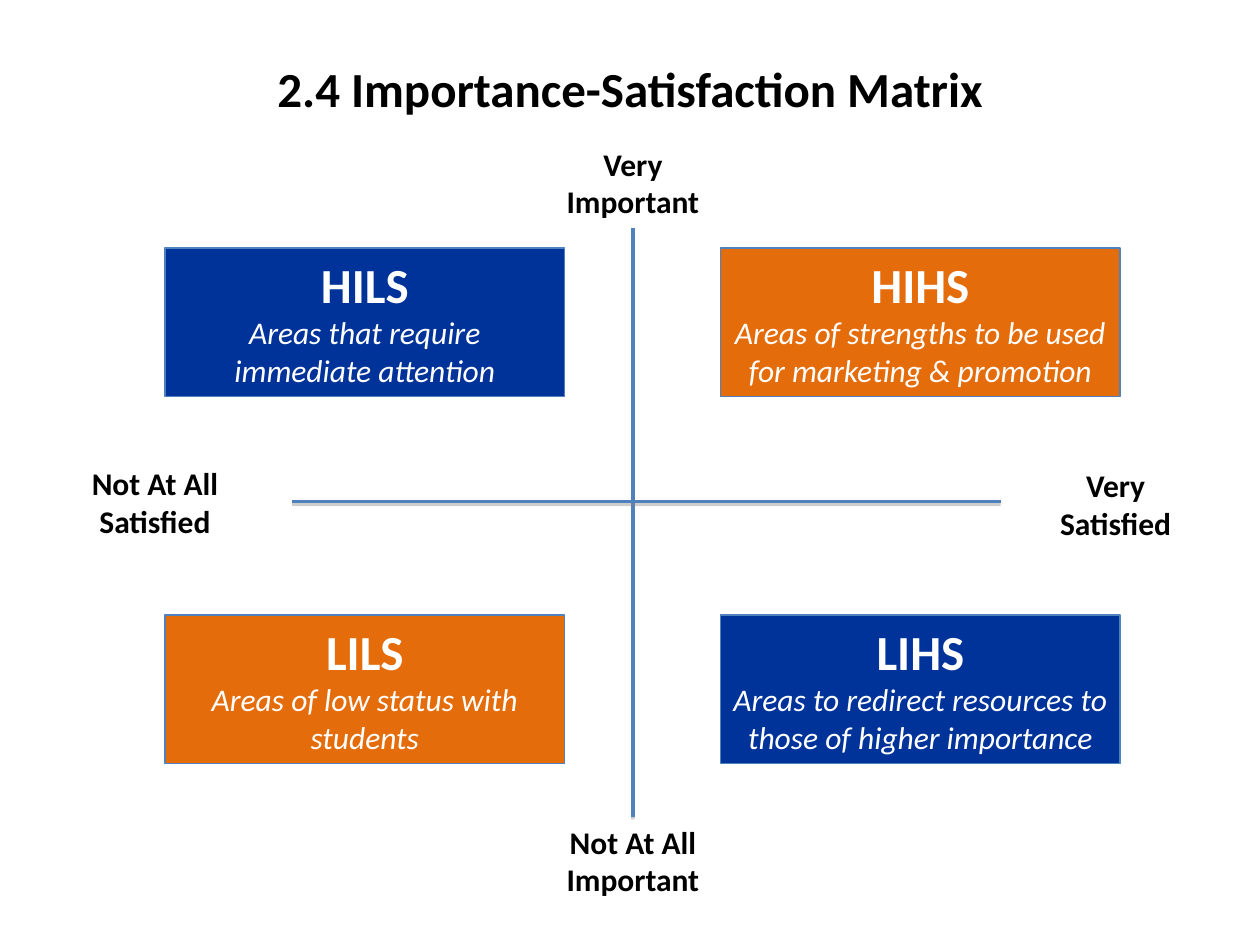
"""Build the importance-satisfaction matrix slide."""
from dataclasses import dataclass

from lxml.etree import SubElement as Sub
from pptx import Presentation as Deck
from pptx.dml.color import RGBColor as Rgb
from pptx.enum.shapes import MSO_CONNECTOR as Link, MSO_SHAPE as Kind
from pptx.enum.text import MSO_ANCHOR as Anchor, PP_ALIGN as Align
from pptx.oxml.ns import qn
from pptx.util import Cm, Pt


@dataclass(frozen=True)
class Theme:
    font: str = "Calibri"
    ink: str = "000000"
    pale: str = "FFFFFF"
    blue: str = "003399"
    warm: str = "E46C0A"
    edge: str = "4F81BD"
    shade: str = "808080"
    large: int = 28
    small: int = 18
    thick: float = 2
    thin: float = 0.75


LOOK = Theme()
MID = 12.76


def add_run(para, text, size, color, bold=False, slant=False):
    para.alignment = Align.CENTER
    run = para.add_run()
    run.text = text
    font = run.font
    font.name, font.size = LOOK.font, Pt(size)
    font.bold, font.italic = bold, slant
    font.color.rgb = Rgb.from_string(color)


def add_label(slide, text, left, top, width, height=1.8, size=LOOK.small, anchor=Anchor.TOP):
    box = slide.shapes.add_textbox(Cm(left), Cm(top), Cm(width), Cm(height))
    frame = box.text_frame
    frame.word_wrap = True
    frame.vertical_anchor = anchor
    add_run(frame.paragraphs[0], text, size, LOOK.ink, bold=True)
    return box


def add_axis(slide, start=(0, 0), end=(0, 0)):
    points = [Cm(n) for n in (*start, *end)]
    axis = slide.shapes.add_connector(Link.STRAIGHT, *points)
    axis.line.color.rgb = Rgb.from_string(LOOK.edge)
    axis.line.width = Pt(LOOK.thick)
    props = axis.element.find(qn("p:spPr"))
    drop = Sub(Sub(props, qn("a:effectLst")), qn("a:outerShdw"),
               dist=str(Pt(1.6)), dir="5400000", rotWithShape="0")
    tint = Sub(drop, qn("a:srgbClr"), val=LOOK.shade)
    Sub(tint, qn("a:alpha"), val="38000")
    return axis


def add_card(slide, code, note, left, top, fill):
    card = slide.shapes.add_shape(Kind.RECTANGLE, Cm(left), Cm(top), Cm(8.05), Cm(3))
    card.shadow.inherit = False
    card.fill.solid()
    card.fill.fore_color.rgb = Rgb.from_string(fill)
    card.line.color.rgb = Rgb.from_string(LOOK.edge)
    card.line.width = Pt(LOOK.thin)
    frame = card.text_frame
    frame.word_wrap = True
    frame.vertical_anchor = Anchor.TOP
    add_run(frame.paragraphs[0], code, LOOK.large, LOOK.pale, bold=True)
    add_run(frame.add_paragraph(), note, LOOK.small, LOOK.pale, slant=True)


def main():
    deck = Deck()
    deck.slide_width, deck.slide_height = Cm(25.4), Cm(19.05)
    slide = deck.slides.add_slide(deck.slide_layouts[6])

    add_label(slide, "2.4 Importance-Satisfaction Matrix", 1.27, 0.76, 22.86,
              2.03, LOOK.large, Anchor.MIDDLE)
    high = add_label(slide, "Very Important", MID - 1.82, 2.79, 3.64)
    low = add_label(slide, "Not At All Important", MID - 2.34, 16.46, 4.68)
    add_label(slide, "Not At All Satisfied", 0.89, 9.22, 4.47, anchor=Anchor.MIDDLE)
    add_label(slide, "Very Satisfied", 20.57, 9.27, 3.84)

    rise = add_axis(slide)
    rise.begin_connect(low, 0)
    rise.end_connect(high, 2)
    add_axis(slide, (5.89, 10.11), (20.17, 10.11))

    cards = (
        ("HILS", "Areas that require immediate attention"),
        ("HIHS", "Areas of strengths to be used for marketing & promotion"),
        ("LILS", "Areas of low status with students"),
        ("LIHS", "Areas to redirect resources to those of higher importance"),
    )
    for spot, (code, note) in enumerate(cards):
        row, col = divmod(spot, 2)
        fill = LOOK.blue if row == col else LOOK.warm
        add_card(slide, code, note, 3.33 + col * 11.2, 5 + row * 7.4, fill)

    deck.save("out.pptx")


if __name__ == "__main__":
    main()
